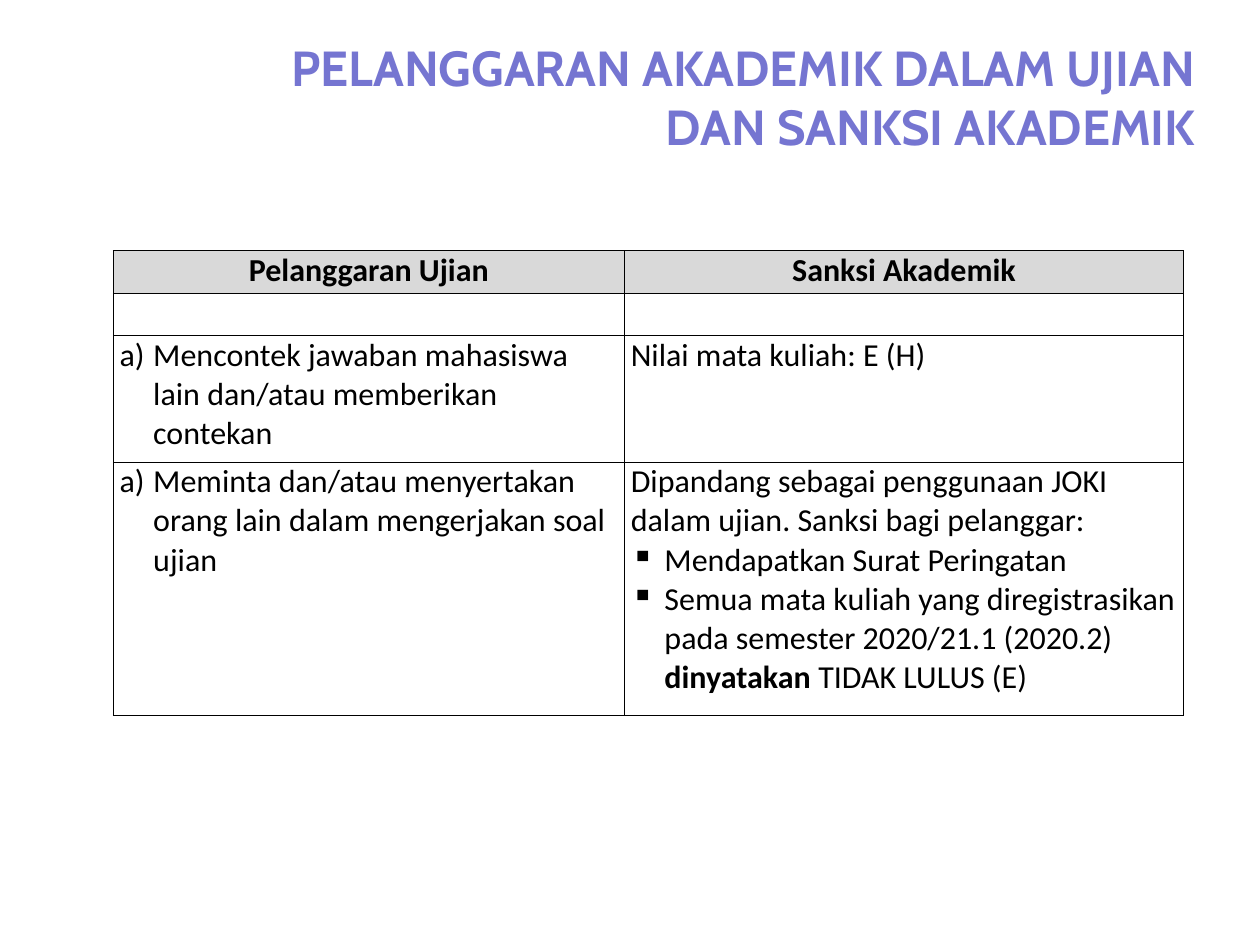
"""Build the slide on exam violations and their academic sanctions."""
import pptx
import pptx.dml.color
import pptx.enum.text
import pptx.oxml
import pptx.oxml.ns
import pptx.util
from pptx.util import Inches

COLORS = {"title": "7575D1", "text": "000000", "header": "D9D9D9", "border": "000000"}
ALIGN = pptx.enum.text.PP_ALIGN
ANCHOR = pptx.enum.text.MSO_ANCHOR
NUMBER = '<a:buAutoNum {} type="alphaLcParenR"/>'
SQUARE = '<a:buChar {} char="▪"/>'
COLUMN_WIDTHS = (5.77, 6.31)
ROW_HEIGHTS = (0.48, 0.48, 1.43, 2.86)
HEADINGS = ("Pelanggaran Ujian", "Sanksi Akademik")
VIOLATIONS = (
    "Mencontek jawaban mahasiswa lain dan/atau memberikan contekan",
    "Meminta dan/atau menyertakan orang lain dalam mengerjakan soal ujian",
)
SANCTION_INTRO = "Dipandang sebagai penggunaan JOKI dalam ujian. Sanksi bagi pelanggar:"
SANCTIONS = (
    [("Mendapatkan Surat Peringatan", False)],
    [("Semua mata kuliah yang diregistrasikan pada semester 2020/21.1 (2020.2) ", False),
     ("dinyatakan ", True), ("TIDAK LULUS (E)", False)],
)


def parse_drawing(markup):
    """Parse a drawing element whose braces mark the namespace place."""
    return pptx.oxml.parse_xml(markup.format(pptx.oxml.ns.nsdecls("a")))


def add_text(frame, text, *, size=26, font="Calibri", color="text", bold=False,
             align=ALIGN.LEFT, bullet=None, first=True):
    """Write a paragraph from a string or from (text, bold) parts."""
    paragraph = frame.paragraphs[0] if first else frame.add_paragraph()
    paragraph.alignment = align
    if bullet:
        properties = paragraph._p.get_or_add_pPr()
        properties.set("marL", str(Inches(0.38)))
        properties.set("indent", str(Inches(-0.38)))
        properties.append(parse_drawing(bullet))
    for part, part_bold in [(text, bold)] if isinstance(text, str) else text:
        run = paragraph.add_run()
        run.text = part
        run.font.size = pptx.util.Pt(size)
        run.font.name = font
        run.font.bold = part_bold
        run.font.color.rgb = pptx.dml.color.RGBColor.from_string(COLORS[color])


def add_title(slide, left, top, width, height):
    """Place the right-aligned title in the given box."""
    frame = slide.shapes.add_textbox(
        Inches(left), Inches(top), Inches(width), Inches(height)).text_frame
    frame.word_wrap = True
    frame.vertical_anchor = ANCHOR.MIDDLE
    frame.margin_left = frame.margin_right = Inches(0.06)
    frame.margin_top = frame.margin_bottom = Inches(0.06)
    add_text(frame, "PELANGGARAN AKADEMIK DALAM UJIAN DAN SANKSI AKADEMIK",
             size=40, font="Cabin", color="title", bold=True, align=ALIGN.RIGHT)


def style_cell(cell, fill=None):
    """Give a cell its margins, black borders and optional fill."""
    cell.margin_left = cell.margin_right = Inches(0.07)
    cell.margin_top = cell.margin_bottom = 0
    for side in ("lnL", "lnR", "lnT", "lnB"):
        cell._tc.get_or_add_tcPr().append(parse_drawing(
            f'<a:{side} {{}} w="12700"><a:solidFill><a:srgbClr val="{COLORS["border"]}"/>'
            f'</a:solidFill></a:{side}>'))
    if fill:
        cell.fill.solid()
        cell.fill.fore_color.rgb = pptx.dml.color.RGBColor.from_string(COLORS[fill])
    else:
        cell.fill.background()


def add_sanction_table(slide, left, top, width, height):
    """Place the table of violations and sanctions in the given box."""
    table = slide.shapes.add_table(
        len(ROW_HEIGHTS), len(COLUMN_WIDTHS),
        Inches(left), Inches(top), Inches(width), Inches(height)).table
    for column, share in zip(table.columns, COLUMN_WIDTHS):
        column.width = Inches(width * share / sum(COLUMN_WIDTHS))
    for index, (row, share) in enumerate(zip(table.rows, ROW_HEIGHTS)):
        row.height = Inches(height * share / sum(ROW_HEIGHTS))
        for cell in row.cells:
            style_cell(cell, "header" if index == 0 else None)
    for column, heading in enumerate(HEADINGS):
        add_text(table.cell(0, column).text_frame, heading, bold=True, align=ALIGN.CENTER)
    for row, violation in enumerate(VIOLATIONS, start=2):
        add_text(table.cell(row, 0).text_frame, violation, bullet=NUMBER)
    add_text(table.cell(2, 1).text_frame, "Nilai mata kuliah: E (H)")
    proxy_sanctions = table.cell(3, 1).text_frame
    add_text(proxy_sanctions, SANCTION_INTRO)
    for sanction in SANCTIONS:
        add_text(proxy_sanctions, sanction, bullet=SQUARE, first=False)


def main():
    """Build and save the presentation."""
    presentation = pptx.Presentation()
    presentation.slide_width = Inches(14.22)
    presentation.slide_height = Inches(10.67)
    slide = presentation.slides.add_slide(presentation.slide_layouts[6])
    add_title(slide, 2.11, 0.42, 11.44, 1.33)
    add_sanction_table(slide, 1.28, 2.83, 12.08, 5.25)
    presentation.save("out.pptx")


if __name__ == "__main__":
    main()
